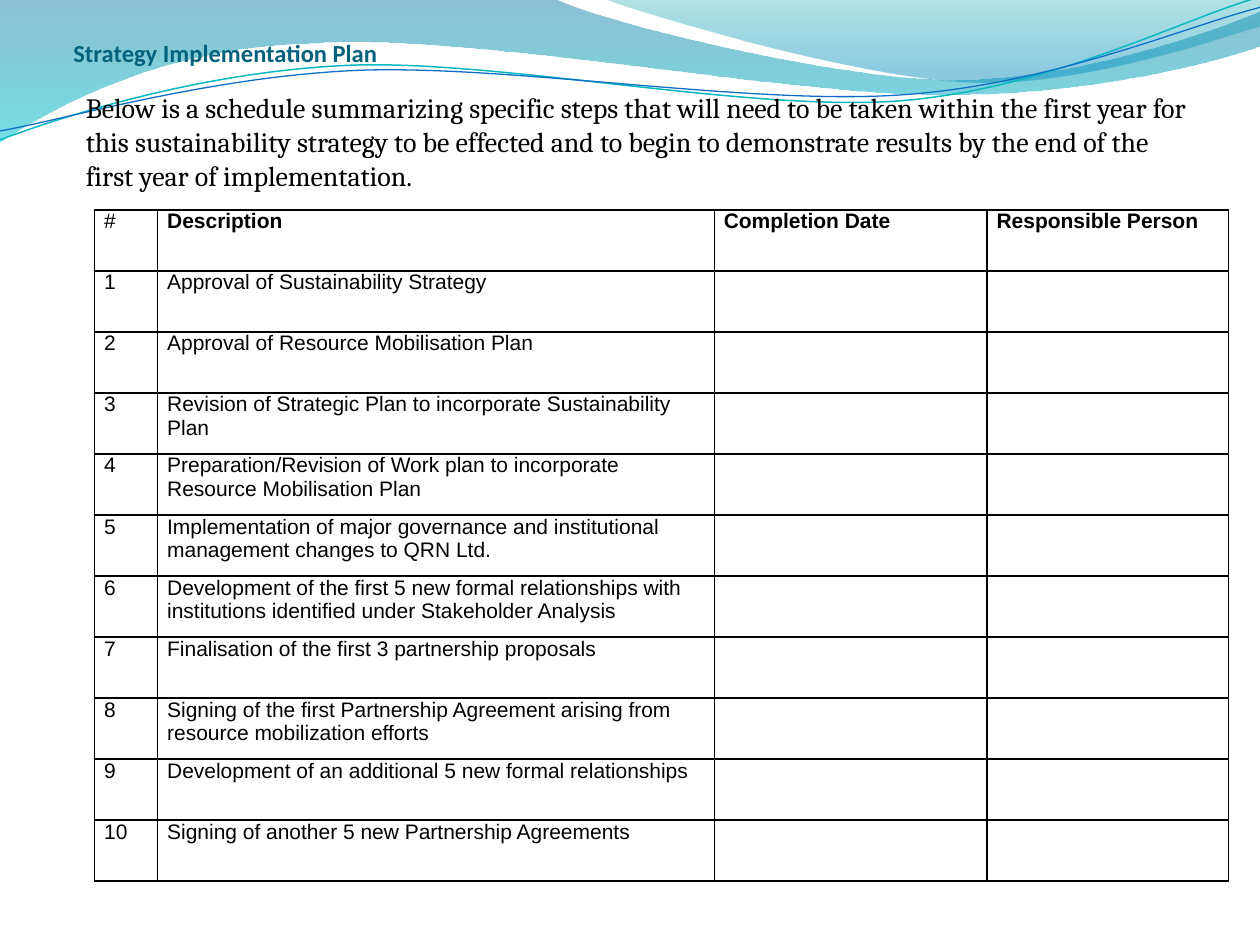
from itertools import product

from lxml import etree
from pptx import Presentation
from pptx import util as u
from pptx.dml import color
from pptx.enum import text
from pptx.oxml import ns

BAND = [
    [(0, 0)],
    [(11.18, -0.03)],
    [(12.09, 0.43), (16.87, 1.6), (19.25, 1.6)],
    [(21.67, 1.6), (24.33, 0.66), (25.4, 0.23)],
    [(25.43, 0.91)],
    [(24.97, 1.12), (22.1, 1.93), (18.95, 1.91)],
    [(15.8, 1.91), (9.7, 0.71), (6.53, 0.86)],
    [(3.28, 0.91), (1.17, 2.11), (-0.03, 2.87)],
    [(0, 0)],
]
CREST = [
    [(12.17, -0.03)],
    [(12.93, 0.28), (17.32, 1.57), (19.53, 1.65)],
    [(21.74, 1.75), (24.41, 0.81), (25.4, 0.53)],
    [(25.4, 0)],
    [(12.17, -0.03)],
]
TEAL_LINE = [
    [(-0.05, 2.22)],
    [(1.19, 1.82), (4.02, 1.04), (7.05, 1.05)],
    [(10.05, 1.07), (15.02, 2.37), (18.08, 2.29)],
    [(21.13, 2.2), (23.87, 0.91), (25.41, 0.55)],
]
BLUE_LINE = [
    [(-0.04, 2.04)],
    [(1.16, 1.9), (4.18, 1.15), (7.2, 1.16)],
    [(10.25, 1.18), (15.13, 2.25), (18.18, 2.17)],
    [(21.21, 2.1), (23.93, 1.06), (25.45, 0.75)],
]
TITLE = "Strategy Implementation Plan"
INTRO = (
    "Below is a schedule summarizing specific steps that will need to be taken "
    "within the first year for this sustainability strategy to be effected and to "
    "begin to demonstrate results by the end of the first year of implementation."
)
HEADINGS = ["#", "Description", "Completion Date", "Responsible Person"]
STEPS = [
    "Approval of Sustainability Strategy",
    "Approval of Resource Mobilisation Plan",
    "Revision of Strategic Plan to incorporate Sustainability Plan",
    "Preparation/Revision of Work plan to incorporate Resource Mobilisation Plan",
    "Implementation of major governance and institutional management changes to QRN Ltd.",
    "Development of the first 5 new formal relationships with institutions "
    "identified under Stakeholder Analysis",
    "Finalisation of the first 3 partnership proposals",
    "Signing of the first Partnership Agreement arising from resource mobilization efforts",
    "Development of an additional 5 new formal relationships",
    "Signing of another 5 new Partnership Agreements",
]
COLUMNS = [1.27, 11.22, 5.5, 4.87]


def rgb(value):
    """Turn a hex string into a colour."""
    return color.RGBColor.from_string(value)


def write(frame, words, font="Arial", size=12, bold=False, fill="000000", after=0):
    """Write one formatted paragraph into a text frame."""
    para = frame.paragraphs[0]
    para.space_after = u.Pt(after)
    span = para.add_run()
    span.text = words
    span.font.name, span.font.size, span.font.bold = font, u.Pt(size), bold
    span.font.color.rgb = rgb(fill)


def add_outline(page, left, top, steps, close):
    """Draw an outline whose three-point steps are cubic curves."""
    points = [(u.Cm(left + x), u.Cm(top + y)) for step in steps for x, y in step]
    builder = page.shapes.build_freeform(*points[0])
    builder.add_line_segments(points[1:], close=close)
    shape = builder.convert_to_shape()
    shape.shadow.inherit = False
    segments = iter(list(shape.element.iter(ns.qn("a:lnTo"))))
    for step in steps[1:]:
        parts = [next(segments) for _ in step]
        if len(parts) == 3:
            curve = etree.Element(ns.qn("a:cubicBezTo"))
            parts[0].addprevious(curve)
            for part in parts:
                curve.append(part[0])
                part.getparent().remove(part)
    return shape


def add_wave(page, left, top, steps, stops):
    """Fill a wave from top to bottom with see-through colours."""
    wave = add_outline(page, left, top, steps, True)
    wave.line.fill.background()
    wave.fill.gradient()
    wave.fill.gradient_angle = 270
    for stop, (position, value, _) in zip(wave.fill.gradient_stops, stops):
        stop.position, stop.color.rgb = position, rgb(value)
    for tint, (_, _, opacity) in zip(wave.element.iter(ns.qn("a:srgbClr")), stops):
        etree.SubElement(tint, ns.qn("a:alpha"), val=str(opacity * 1000))


def add_header(page, left, top):
    """Place the waves and the thin tilted lines across the top."""
    add_wave(page, left, top, BAND, [(0, "0074A1", 45), (1, "00C6CF", 55)])
    add_wave(page, left, top, CREST, [(0, "00A1A9", 30), (0.8, "008BBF", 45)])
    for steps, value, width in [(TEAL_LINE, "0AB8BF", 0.85), (BLUE_LINE, "0F6FC6", 0.75)]:
        curve = add_outline(page, left, top, steps, False)
        curve.rotation = 357.3
        curve.fill.background()
        curve.line.color.rgb, curve.line.width = rgb(value), u.Pt(width)


def add_words(page, left, top, width, height, words, anchor, inset, **style):
    """Place a wrapped text box."""
    box = page.shapes.add_textbox(*map(u.Cm, (left, top, width, height)))
    frame = box.text_frame
    frame.word_wrap, frame.vertical_anchor = True, anchor
    frame.margin_left = frame.margin_right = u.Cm(inset)
    write(frame, words, **style)


def add_borders(cell):
    """Give a cell thin black borders and no fill."""
    cell.fill.background()
    props = cell._tc.get_or_add_tcPr()
    for index, side in enumerate(("lnL", "lnR", "lnT", "lnB")):
        line = etree.Element(ns.qn(f"a:{side}"), w=str(u.Pt(1)))
        solid = etree.SubElement(line, ns.qn("a:solidFill"))
        etree.SubElement(solid, ns.qn("a:srgbClr"), val="000000")
        props.insert(index, line)


def add_schedule(page, left, top, width, height):
    """Place the schedule of steps as a table."""
    rows = [HEADINGS] + [[str(n), step, "", ""] for n, step in enumerate(STEPS, 1)]
    size = len(rows), len(COLUMNS)
    table = page.shapes.add_table(*size, *map(u.Cm, (left, top, width, height))).table
    table.first_row = table.horz_banding = False
    for column, breadth in zip(table.columns, COLUMNS):
        column.width = u.Cm(breadth)
    for row, column in product(*map(range, size)):
        cell = table.cell(row, column)
        cell.margin_left = cell.margin_right = u.Cm(0.19)
        cell.margin_top = cell.margin_bottom = 0
        add_borders(cell)
        if rows[row][column]:
            write(cell.text_frame, rows[row][column], bold=row == 0 and column > 0, after=6)


def main():
    """Build the slide and save it."""
    deck = Presentation()
    deck.slide_width, deck.slide_height = u.Cm(25.4), u.Cm(19.05)
    page = deck.slides.add_slide(deck.slide_layouts[6])
    add_header(page, 0, 0)
    add_words(page, 1.48, 0.64, 22.86, 1.9, TITLE, text.MSO_ANCHOR.TOP, 0,
              font="Calibri", size=14, bold=True, fill="04617B")
    add_schedule(page, 1.91, 4.23, 22.86, 13.53)
    add_words(page, 1.48, 1.68, 22.86, 2.34, INTRO, text.MSO_ANCHOR.MIDDLE, 0.25,
              font="Cambria", size=16)
    deck.save("out.pptx")


if __name__ == "__main__":
    main()
